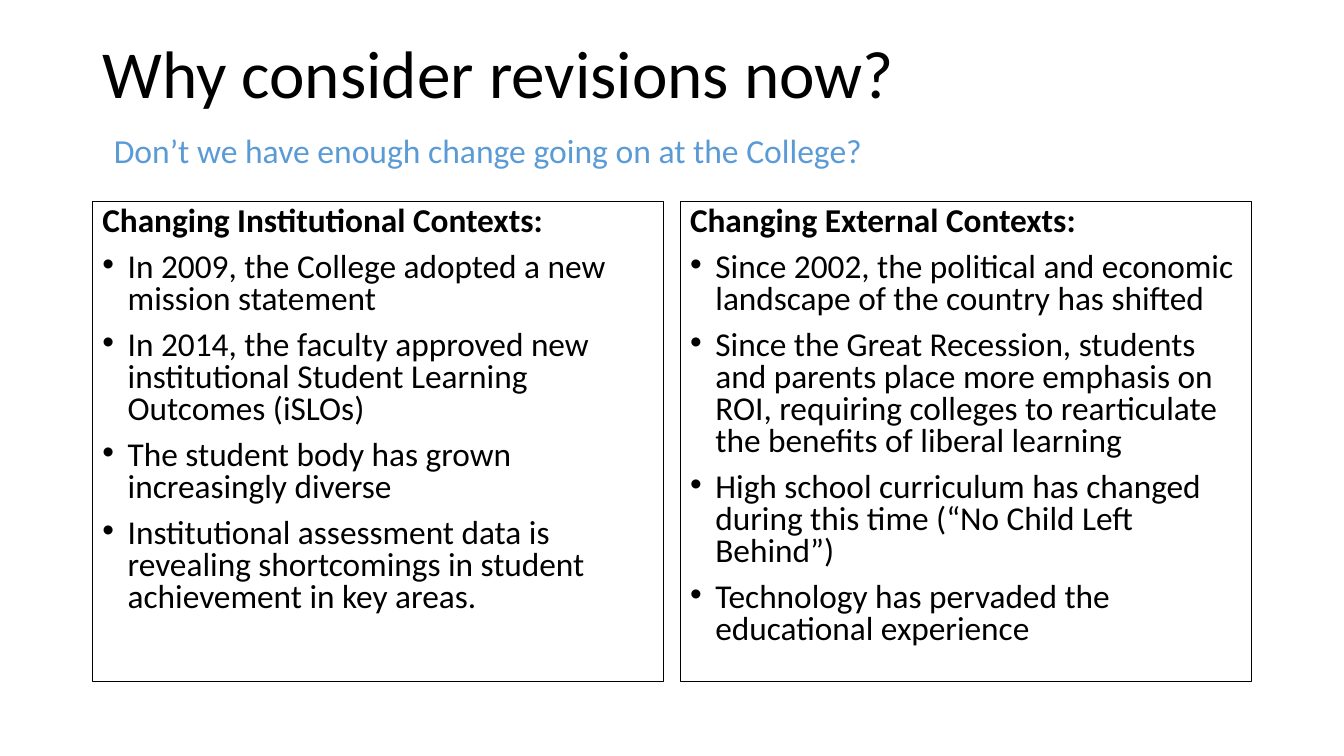
from dataclasses import dataclass

from lxml import etree
from pptx import Presentation
from pptx.dml.color import RGBColor
from pptx.enum.text import MSO_ANCHOR
from pptx.oxml.ns import qn
from pptx.util import Cm, Pt

TOP = MSO_ANCHOR.TOP


@dataclass(frozen=True)
class Theme:
    font: str = "Calibri"
    ink: RGBColor = RGBColor(0x00, 0x00, 0x00)
    accent: RGBColor = RGBColor(0x5B, 0x9B, 0xD5)
    title_size: float = 48
    subtitle_size: float = 24
    body_size: float = 23.8
    border_width: float = 0.75


THEME = Theme()
MARGIN = 2.33
COLUMN_TOP, COLUMN_WIDTH, COLUMN_HEIGHT, COLUMN_GAP = 5.08, 14.39, 12.09, 0.42
BULLET_INDENT = Cm(0.64)

COLUMNS = [
    ("Changing Institutional Contexts:", [
        "In 2009, the College adopted a new mission statement",
        "In 2014, the faculty approved new institutional Student Learning Outcomes (iSLOs)",
        "The student body has grown increasingly diverse",
        "Institutional assessment data is revealing shortcomings in student "
        "achievement in key areas.",
    ]),
    ("Changing External Contexts:", [
        "Since 2002, the political and economic landscape of the country has shifted",
        "Since the Great Recession, students and parents place more emphasis on ROI, "
        "requiring colleges to rearticulate the benefits of liberal learning",
        "High school curriculum has changed during this time (“No Child Left Behind”)",
        "Technology has pervaded the educational experience",
    ]),
]


def add_box(slide, left, top, width, height):
    """Add an empty, wrapping text box; lengths are in centimetres."""
    shape = slide.shapes.add_textbox(Cm(left), Cm(top), Cm(width), Cm(height))
    shape.text_frame.word_wrap = True
    shape.text_frame.vertical_anchor = TOP
    return shape


def write(paragraph, text, *, size, color=THEME.ink, bold=False,
          line_spacing=1.0, space_before=0):
    paragraph.line_spacing = line_spacing
    paragraph.space_before = Pt(space_before)
    run = paragraph.add_run()
    run.text = text
    run.font.name = THEME.font
    run.font.size = Pt(size)
    run.font.bold = bold
    run.font.color.rgb = color


def add_bullet(paragraph):
    properties = paragraph._p.get_or_add_pPr()
    properties.set("marL", str(BULLET_INDENT))
    properties.set("indent", str(-BULLET_INDENT))
    etree.SubElement(properties, qn("a:buFont")).set("typeface", "Arial")
    etree.SubElement(properties, qn("a:buChar")).set("char", "•")


def add_title(slide, text):
    frame = add_box(slide, MARGIN, 1.02, 29.21, 3.68).text_frame
    frame.margin_top = 0
    write(frame.paragraphs[0], text, size=THEME.title_size, line_spacing=0.9)


def add_subtitle(slide, text):
    frame = add_box(slide, 2.62, 3.15, 25.3, 1.27).text_frame
    write(frame.paragraphs[0], text, size=THEME.subtitle_size, color=THEME.accent)


def add_column(slide, left, heading, points):
    shape = add_box(slide, left, COLUMN_TOP, COLUMN_WIDTH, COLUMN_HEIGHT)
    shape.line.color.rgb = THEME.ink
    shape.line.width = Pt(THEME.border_width)
    frame = shape.text_frame
    body_format = {"size": THEME.body_size, "line_spacing": 0.8, "space_before": 10}
    write(frame.paragraphs[0], heading, bold=True, **body_format)
    for point in points:
        paragraph = frame.add_paragraph()
        write(paragraph, point, **body_format)
        add_bullet(paragraph)


def main():
    presentation = Presentation()
    presentation.slide_width, presentation.slide_height = Cm(33.87), Cm(19.05)
    slide = presentation.slides.add_slide(presentation.slide_layouts[6])
    add_title(slide, "Why consider revisions now?")
    for index, (heading, points) in enumerate(COLUMNS):
        left = MARGIN + index * (COLUMN_WIDTH + COLUMN_GAP)
        add_column(slide, left, heading, points)
    add_subtitle(slide, "Don’t we have enough change going on at the College?")
    presentation.save("out.pptx")


if __name__ == "__main__":
    main()
